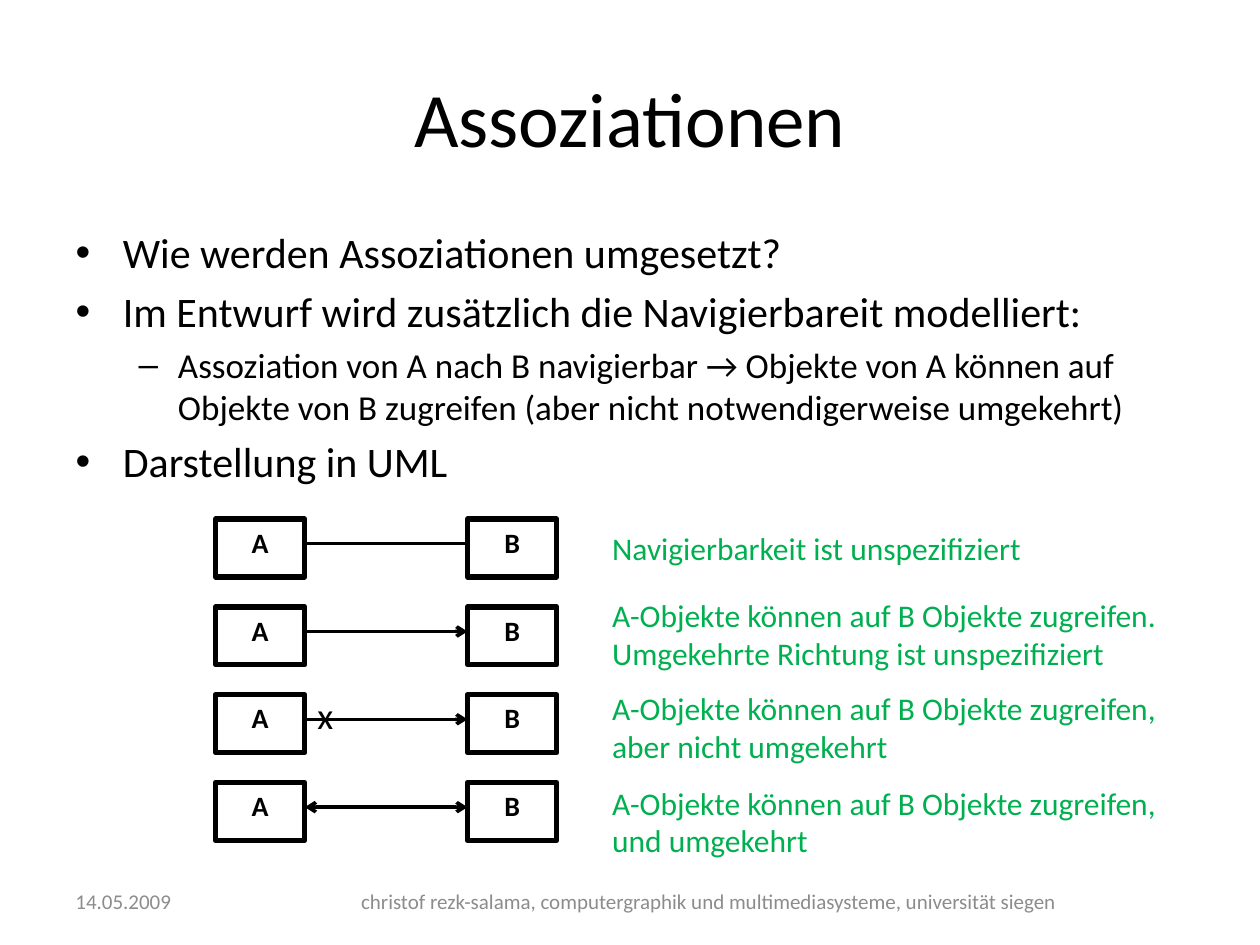
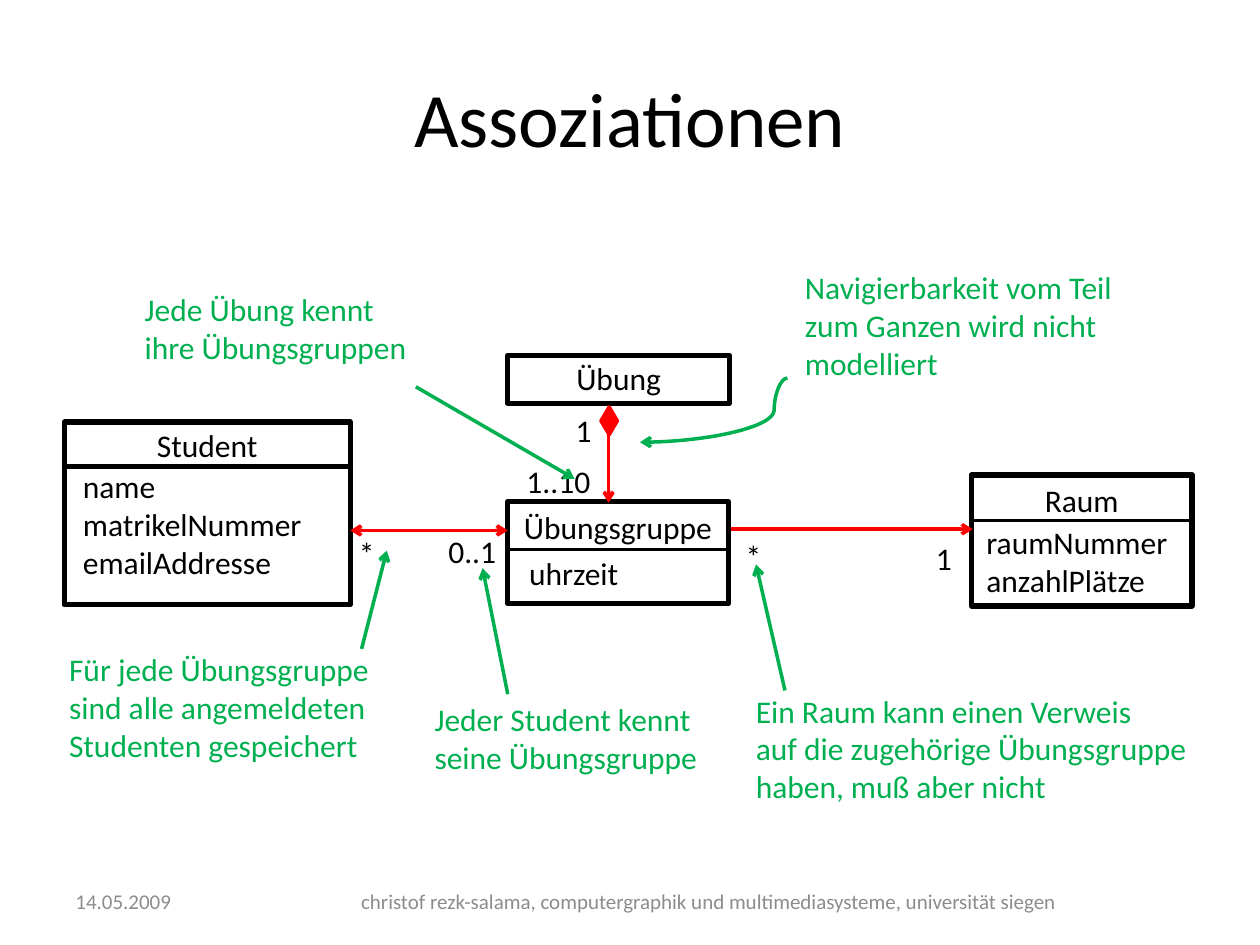
from dataclasses import dataclass

from lxml.etree import SubElement
from pptx import Presentation
from pptx.dml.color import RGBColor
from pptx.enum.shapes import MSO_CONNECTOR as Connector, MSO_SHAPE as Preset
from pptx.enum.text import MSO_ANCHOR as Anchor, MSO_AUTO_SIZE as AutoSize, PP_ALIGN as Align
from pptx.oxml.ns import qn
from pptx.util import Inches, Pt

WIDTH, HEIGHT = Inches(10), Inches(7.5)
COLUMNS, ROWS = 100, 75
FONT = "Calibri"
COLORS = {
    "ink": "000000",
    "paper": "FFFFFF",
    "note": "00B050",
    "association": "FF0000",
    "footer": "8C8C8C",
}
TITLE = "Assoziationen"
DATE = "14.05.2009"
FOOTER = "christof rezk-salama, computergraphik und multimediasysteme, universität siegen"


@dataclass(frozen=True)
class Area:
    """A rectangle in grid columns and rows."""
    left: float
    top: float
    width: float
    height: float

    def lengths(self) -> tuple:
        return column(self.left), row(self.top), column(self.width), row(self.height)


@dataclass(frozen=True)
class Label:
    text: str
    area: Area
    color: str = "ink"
    size: float = 18


@dataclass(frozen=True)
class Line:
    start: tuple
    end: tuple
    color: str = "ink"
    width: float = 2
    start_arrow: bool = False
    end_arrow: bool = False
    bend: float | None = None


@dataclass(frozen=True)
class Navigability:
    note: str
    note_top: float
    note_width: float
    to_a: bool = False
    to_b: bool = False


@dataclass(frozen=True)
class ClassBox:
    name: str
    area: Area
    name_inset: float = 0.5
    header: float = 0
    divider_width: float = 1.75
    attributes: Label | None = None


TITLE_AREA = Area(5, 3, 90, 12.5)
BODY_AREA = Area(5, 17.5, 90, 49.5)
DATE_AREA = Area(5, 69.5, 19.2, 4)
FOOTER_AREA = Area(25, 69.5, 62.5, 4)

BULLETS = [
    (0, "Wie werden Assoziationen umgesetzt?"),
    (0, "Im Entwurf wird zusätzlich die Navigierbareit modelliert:"),
    (1, "Assoziation von A nach B navigierbar → Objekte von A können auf "
        "Objekte von B zugreifen (aber nicht notwendigerweise umgekehrt)"),
    (0, "Darstellung in UML"),
]
BULLET_SIZES = {0: 24, 1: 20}

FIRST_ROW, ROW_PITCH = 41.2, 6.97
BOX_A_LEFT, BOX_B_LEFT, BOX_WIDTH, BOX_HEIGHT = 17.1, 37.1, 7.1, 4.6
NAVIGABILITIES = [
    Navigability("Navigierbarkeit ist unspezifiziert", 41.5, 34.8),
    Navigability("A-Objekte können auf B Objekte zugreifen.\n"
                 "Umgekehrte Richtung ist unspezifiziert", 46.8, 45.7, to_b=True),
    Navigability("A-Objekte können auf B Objekte zugreifen,\n"
                 "aber nicht umgekehrt", 54.2, 46.3, to_b=True),
    Navigability("A-Objekte können auf B Objekte zugreifen,\n"
                 "und umgekehrt", 61.7, 46.3, to_a=True, to_b=True),
]
NOT_NAVIGABLE = Label("x", Area(24.2, 54.5, 3.3, 4.5), size=21)

CLASS_BOXES = [
    ClassBox("Student", Area(5.1, 33.5, 22.7, 14.5), 0.3, 3.5, 3,
             Label("name\nmatrikelNummer\nemailAddresse", Area(5.6, 36.6, 19.6, 10.1))),
    ClassBox("Übung", Area(40.3, 28.2, 17.6, 3.8), 0.3),
    ClassBox("Übungsgruppe", Area(40.3, 39.8, 17.5, 8.1), header=3.8,
             attributes=Label("uhrzeit", Area(41, 43.5, 9.2, 4))),
    ClassBox("Raum", Area(77.1, 37.7, 17.5, 10.4), header=3.6,
             attributes=Label("raumNummer\nanzahlPlätze", Area(77.3, 41, 16.5, 7.1))),
]
MULTIPLICITIES = [
    Label("1..10", Area(40.8, 36.2, 7.1, 4)),
    Label("1", Area(44.7, 32.1, 3.3, 4)),
    Label("1", Area(73.3, 42.3, 3.3, 4)),
    Label("*", Area(58.2, 42.1, 3.3, 4)),
    Label("0..1", Area(34.6, 41.7, 5.8, 4)),
    Label("*", Area(27.5, 41.9, 2.2, 4.5)),
]
ASSOCIATIONS = [
    Line((27.8, 42.1), (40.3, 42.1), "association", start_arrow=True, end_arrow=True),
    Line((48.3, 32.9), (48.3, 39.9), "association", end_arrow=True),
    Line((58, 42), (77.2, 42), "association", end_arrow=True),
]
COMPOSITION_AREA = Area(47.7, 32.3, 1.3, 2.2)
NOTES = [
    Label("Ein Raum kann einen Verweis\nauf die zugehörige Übungsgruppe\n"
          "haben, muß aber nicht", Area(59, 54.4, 36.7, 10.1), "note"),
    Label("Für jede Übungsgruppe\nsind alle angemeldeten\nStudenten gespeichert",
          Area(4.5, 51.1, 26.7, 10.1), "note"),
    Label("Jeder Student kennt\nseine Übungsgruppe", Area(33.5, 55.1, 23.2, 7.1), "note"),
    Label("Navigierbarkeit vom Teil\nzum Ganzen wird nicht\nmodelliert",
          Area(62.9, 20.8, 26.6, 10.1), "note"),
    Label("Jede Übung kennt\nihre Übungsgruppen", Area(10.5, 22.5, 23.1, 7.1), "note"),
]
POINTERS = [
    Line((62.3, 54.8), (60, 44.8), "note", end_arrow=True),
    Line((28.7, 51.5), (30.7, 43.7), "note", end_arrow=True),
    Line((40.3, 55.1), (38.3, 45.1), "note", end_arrow=True),
    Line((62.5, 30), (50.8, 35.1), "note", end_arrow=True, bend=0.09),
    Line((33, 30.7), (45.6, 38), "note", end_arrow=True),
]


def column(count: float) -> int:
    return round(WIDTH * count / COLUMNS)


def row(count: float) -> int:
    return round(HEIGHT * count / ROWS)


def rgb(name: str) -> RGBColor:
    return RGBColor.from_string(COLORS[name])


def format_paragraph(paragraph, size: float, color: str = "ink", bold: bool = False,
                     align=Align.LEFT) -> None:
    paragraph.alignment = align
    for run in paragraph.runs:
        run.font.name, run.font.size, run.font.bold = FONT, Pt(size), bold
        run.font.color.rgb = rgb(color)


def write(frame, text: str, size: float, color: str = "ink", bold: bool = False,
          align=Align.LEFT) -> None:
    frame.text = text
    for paragraph in frame.paragraphs:
        format_paragraph(paragraph, size, color, bold, align)


def place(shape, area: Area) -> None:
    shape.left, shape.top, shape.width, shape.height = area.lengths()


def draw_label(slide, label: Label) -> None:
    frame = slide.shapes.add_textbox(*label.area.lengths()).text_frame
    frame.word_wrap = False
    frame.auto_size = AutoSize.SHAPE_TO_FIT_TEXT
    write(frame, label.text, label.size, label.color)


def draw_footer_text(slide, text: str, area: Area, align) -> None:
    frame = slide.shapes.add_textbox(*area.lengths()).text_frame
    frame.word_wrap = True
    frame.vertical_anchor = Anchor.MIDDLE
    write(frame, text, 12, "footer", align=align)


def draw_shape(slide, preset, area: Area, fill: str, line: str, width: float):
    shape = slide.shapes.add_shape(preset, *area.lengths())
    shape.shadow.inherit = False
    shape.fill.solid()
    shape.fill.fore_color.rgb = rgb(fill)
    shape.line.color.rgb = rgb(line)
    shape.line.width = Pt(width)
    return shape


def draw_box(slide, text: str, area: Area, size: float, bold: bool = False,
             inset: float = 0.5) -> None:
    """Draw an outlined box with its name centred at the top."""
    frame = draw_shape(slide, Preset.RECTANGLE, area, "paper", "ink", 3).text_frame
    frame.word_wrap = True
    frame.vertical_anchor = Anchor.TOP
    frame.margin_top = row(inset)
    frame.margin_left = frame.margin_right = 0
    write(frame, text, size, bold=bold, align=Align.CENTER)


def draw_line(slide, line: Line) -> None:
    kind = Connector.STRAIGHT if line.bend is None else Connector.CURVE
    connector = slide.shapes.add_connector(
        kind, column(line.start[0]), row(line.start[1]), column(line.end[0]), row(line.end[1]))
    connector.line.color.rgb = rgb(line.color)
    connector.line.width = Pt(line.width)
    properties = connector.element.spPr
    outline = properties.find(qn("a:ln"))
    for tag, wanted in (("a:headEnd", line.start_arrow), ("a:tailEnd", line.end_arrow)):
        if wanted:
            SubElement(outline, qn(tag), type="arrow")
    SubElement(properties, qn("a:effectLst"))
    if line.bend is not None:
        adjustments = properties.find(qn("a:prstGeom")).find(qn("a:avLst"))
        SubElement(adjustments, qn("a:gd"), name="adj1", fmla=f"val {round(line.bend * 100000)}")


def draw_class_box(slide, box: ClassBox) -> None:
    area = box.area
    draw_box(slide, box.name, area, 18, inset=box.name_inset)
    if box.attributes:
        divider = area.top + box.header
        draw_line(slide, Line((area.left, divider), (area.left + area.width, divider),
                              width=box.divider_width))
        draw_label(slide, box.attributes)


def draw_navigability(slide, top: float, item: Navigability) -> None:
    for name, left in (("A", BOX_A_LEFT), ("B", BOX_B_LEFT)):
        draw_box(slide, name, Area(left, top, BOX_WIDTH, BOX_HEIGHT), 16, bold=True)
    middle = top + 1.95
    draw_line(slide, Line((BOX_A_LEFT + BOX_WIDTH, middle), (BOX_B_LEFT, middle),
                          start_arrow=item.to_a, end_arrow=item.to_b))
    note_height = 7.1 if "\n" in item.note else 4
    draw_label(slide, Label(item.note, Area(47.6, item.note_top, item.note_width, note_height),
                            "note"))


def add_slide(presentation, layout: str):
    slide = presentation.slides.add_slide(presentation.slide_layouts.get_by_name(layout))
    title = slide.shapes.title
    place(title, TITLE_AREA)
    write(title.text_frame, TITLE, 44, align=Align.CENTER)
    title.text_frame.vertical_anchor = Anchor.MIDDLE
    draw_footer_text(slide, DATE, DATE_AREA, Align.LEFT)
    draw_footer_text(slide, FOOTER, FOOTER_AREA, Align.CENTER)
    return slide


def fill_body(slide) -> None:
    body = slide.placeholders[1]
    place(body, BODY_AREA)
    frame = body.text_frame
    frame.auto_size = AutoSize.NONE
    frame.text = "\n".join(text for _, text in BULLETS)
    for paragraph, (level, _) in zip(frame.paragraphs, BULLETS):
        paragraph.level = level
        format_paragraph(paragraph, BULLET_SIZES[level])
    frame.paragraphs[0].space_before = Pt(0)


def build_navigability_slide(presentation) -> None:
    slide = add_slide(presentation, "Title and Content")
    fill_body(slide)
    draw_label(slide, NOT_NAVIGABLE)
    for index, item in enumerate(NAVIGABILITIES):
        draw_navigability(slide, FIRST_ROW + index * ROW_PITCH, item)


def build_class_diagram_slide(presentation) -> None:
    slide = add_slide(presentation, "Title Only")
    for box in CLASS_BOXES:
        draw_class_box(slide, box)
    for label in MULTIPLICITIES + NOTES:
        draw_label(slide, label)
    for line in ASSOCIATIONS + POINTERS:
        draw_line(slide, line)
    draw_shape(slide, Preset.DIAMOND, COMPOSITION_AREA, "association", "association", 2)


def main() -> None:
    presentation = Presentation()
    presentation.slide_width, presentation.slide_height = WIDTH, HEIGHT
    build_navigability_slide(presentation)
    build_class_diagram_slide(presentation)
    presentation.save("out.pptx")


if __name__ == "__main__":
    main()
